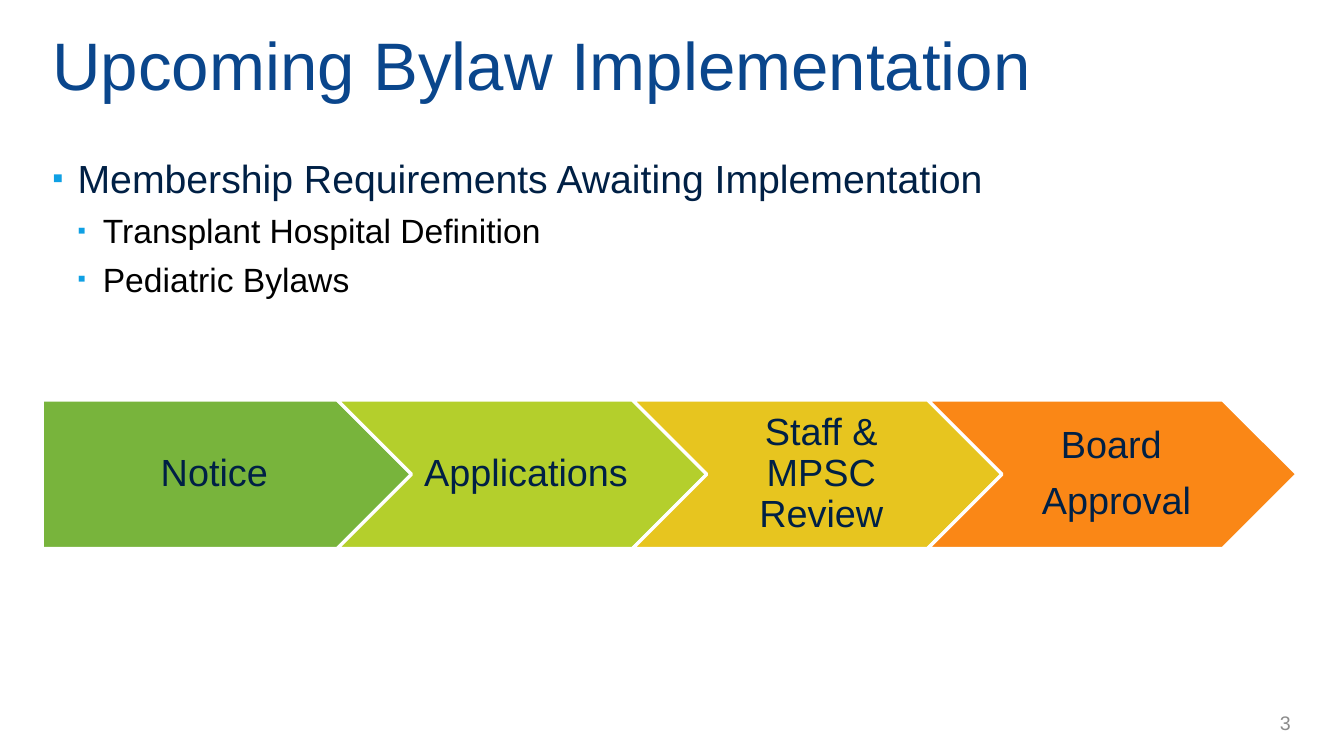
from dataclasses import dataclass

from lxml.etree import SubElement
from pptx import Presentation
from pptx.dml.color import RGBColor
from pptx.enum.shapes import MSO_SHAPE
from pptx.enum.text import MSO_ANCHOR, MSO_AUTO_SIZE, PP_ALIGN
from pptx.oxml.ns import qn
from pptx.util import Inches, Pt

COLORS = {
    "title": "0A468C",
    "navy": "002045",
    "black": "000000",
    "bullet": "0FA0E4",
    "grey": "8C8C8C",
    "white": "FFFFFF",
    "green": "78B43C",
    "lime": "B4CF2C",
    "yellow": "E7C51F",
    "orange": "FA8716",
}


@dataclass(frozen=True)
class Topic:
    text: str
    level: int
    size: int
    color: str
    space_before: int
    bullet_percent: int


@dataclass(frozen=True)
class Step:
    lines: tuple[str, ...]
    fill: str


TOPICS = [
    Topic("Membership Requirements Awaiting Implementation", 0, 28, "navy", 0, 80),
    Topic("Transplant Hospital Definition", 1, 24, "black", 6, 70),
    Topic("Pediatric Bylaws", 1, 24, "black", 6, 70),
]
STEPS = [
    Step(("Notice",), "green"),
    Step(("Applications",), "lime"),
    Step(("Staff & MPSC Review",), "yellow"),
    Step(("Board ", "Approval"), "orange"),
]
MARGIN = 0.42
STEP_TOP, STEP_WIDTH, STEP_HEIGHT = 3.97, 3.66, 1.47
STEP_PITCH = 0.8 * STEP_WIDTH


def rgb(name: str) -> RGBColor:
    return RGBColor.from_string(COLORS[name])


def place(shape, left: float, top: float, width: float, height: float) -> None:
    shape.left, shape.top = Inches(left), Inches(top)
    shape.width, shape.height = Inches(width), Inches(height)


def set_up_frame(frame, anchor=MSO_ANCHOR.TOP) -> None:
    frame.word_wrap = True
    frame.auto_size = MSO_AUTO_SIZE.NONE
    frame.vertical_anchor = anchor


def write(paragraph, text: str, *, size: float, color: str, align=PP_ALIGN.LEFT,
          line_spacing: float = 1.0, before: float = 0, after: float = 0) -> None:
    paragraph.alignment = align
    paragraph.line_spacing = line_spacing
    paragraph.space_before, paragraph.space_after = Pt(before), Pt(after)
    run = paragraph.add_run()
    run.text = text
    run.font.name, run.font.size = "Arial", Pt(size)
    run.font.color.rgb = rgb(color)


def add_bullet(paragraph, level: int, percent: int) -> None:
    paragraph.level = level
    properties = paragraph._p.get_or_add_pPr()
    properties.set("marL", str(Inches(0.25 * (level + 1))))
    properties.set("indent", str(-Inches(0.25)))
    bullet_color = SubElement(properties, qn("a:buClr"))
    SubElement(bullet_color, qn("a:srgbClr"), val=COLORS["bullet"])
    SubElement(properties, qn("a:buSzPct"), val=str(percent * 1000))
    SubElement(properties, qn("a:buFont"), typeface="Arial")
    SubElement(properties, qn("a:buChar"), char="▪")


def add_title(slide) -> None:
    title = slide.shapes.title
    place(title, MARGIN, 0.17, 12.74, 0.93)
    set_up_frame(title.text_frame, MSO_ANCHOR.MIDDLE)
    write(title.text_frame.paragraphs[0], "Upcoming Bylaw Implementation",
          size=48, color="title")


def add_topics(slide) -> None:
    body = slide.placeholders[1]
    place(body, MARGIN, 1.48, 12.46, 1.89)
    frame = body.text_frame
    set_up_frame(frame)
    for index, topic in enumerate(TOPICS):
        paragraph = frame.add_paragraph() if index else frame.paragraphs[0]
        add_bullet(paragraph, topic.level, topic.bullet_percent)
        write(paragraph, topic.text, size=topic.size, color=topic.color,
              before=topic.space_before)


def add_step(slide, index: int, step: Step) -> None:
    preset = MSO_SHAPE.CHEVRON if index else MSO_SHAPE.PENTAGON
    arrow = slide.shapes.add_shape(
        preset, Inches(MARGIN + index * STEP_PITCH), Inches(STEP_TOP),
        Inches(STEP_WIDTH), Inches(STEP_HEIGHT))
    arrow.shadow.inherit = False
    arrow.fill.solid()
    arrow.fill.fore_color.rgb = rgb(step.fill)
    arrow.line.color.rgb = rgb("white")
    arrow.line.width = Pt(2.25)
    frame = arrow.text_frame
    set_up_frame(frame, MSO_ANCHOR.MIDDLE)
    frame.margin_left = Inches(0.12 if index else 0.16)
    frame.margin_right = Inches(0.04)
    frame.margin_top = frame.margin_bottom = Inches(0.08)
    for number, line in enumerate(step.lines):
        paragraph = frame.add_paragraph() if number else frame.paragraphs[0]
        write(paragraph, line, size=27, color="navy", align=PP_ALIGN.CENTER,
              line_spacing=0.9, after=10.8)


def add_page_number(slide) -> None:
    page = slide.shapes.add_textbox(
        Inches(10.64), Inches(6.97), Inches(2.26), Inches(0.4))
    set_up_frame(page.text_frame, MSO_ANCHOR.MIDDLE)
    write(page.text_frame.paragraphs[0], "3", size=14, color="grey",
          align=PP_ALIGN.RIGHT)


def main() -> None:
    deck = Presentation()
    deck.slide_width, deck.slide_height = Inches(13.33), Inches(7.5)
    slide = deck.slides.add_slide(deck.slide_layouts[1])
    add_topics(slide)
    add_title(slide)
    add_page_number(slide)
    for index, step in enumerate(STEPS):
        add_step(slide, index, step)
    deck.save("out.pptx")


if __name__ == "__main__":
    main()
